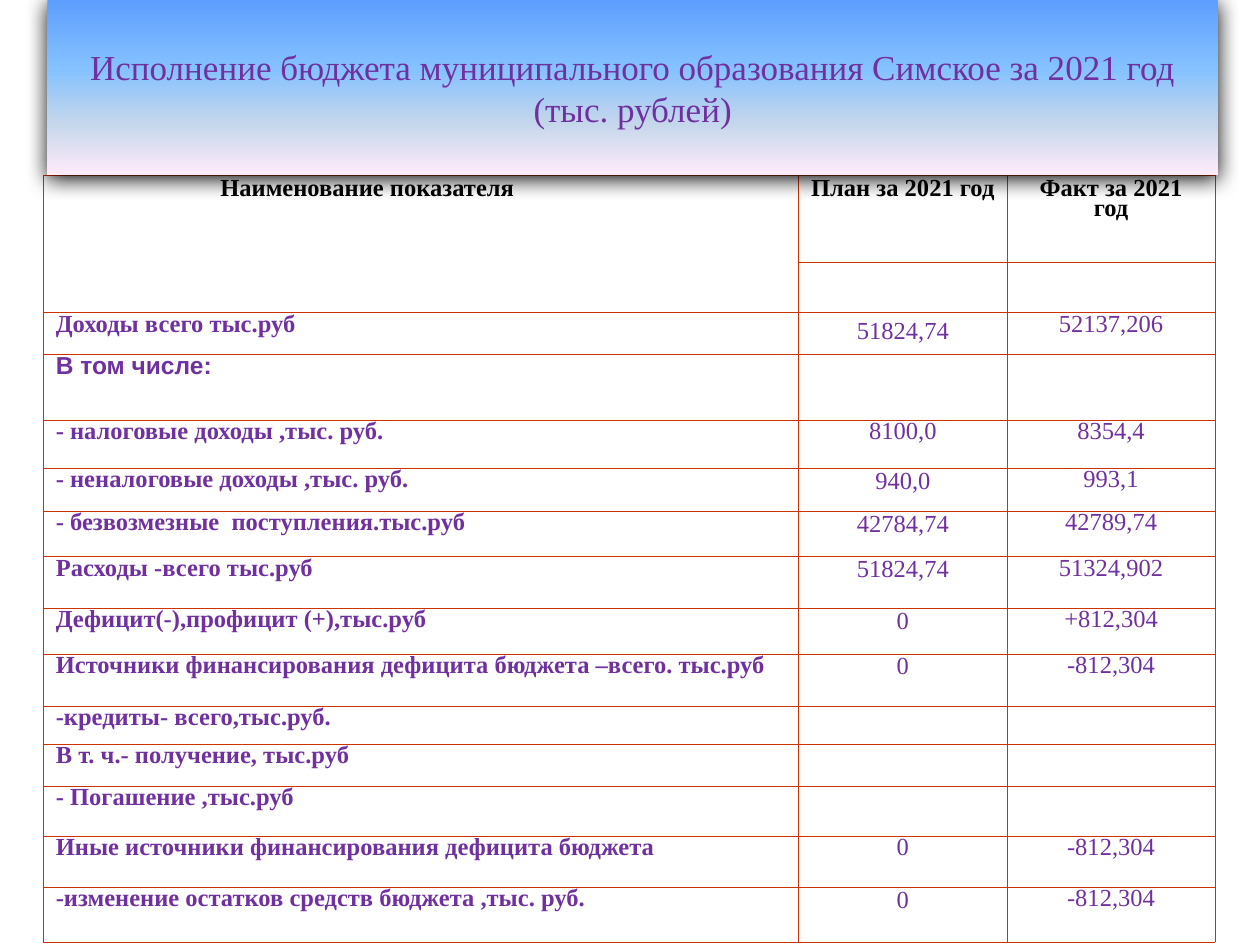
from copy import deepcopy

from lxml import etree
from pptx import Presentation
from pptx.dml.color import RGBColor
from pptx.enum.shapes import MSO_SHAPE
from pptx.enum.text import MSO_ANCHOR, PP_ALIGN
from pptx.oxml.ns import qn
from pptx.util import Pt

RECT = MSO_SHAPE.RECTANGLE
LEFT, MID = PP_ALIGN.LEFT, PP_ALIGN.CENTER
CENTER = MSO_ANCHOR.MIDDLE

TITLE = "Исполнение бюджета муниципального образования Симское за 2021 год (тыс. рублей)"
HEADS = ["Наименование показателя", "План за 2021 год", "Факт за 2021 год"]
ROWS = [
    ("Доходы всего тыс.руб", "51824,74", "52137,206"),
    ("В том числе:", "", ""),
    ("- налоговые доходы ,тыс. руб.", "8100,0", "8354,4"),
    ("- неналоговые доходы ,тыс. руб.", "940,0", "993,1"),
    ("- безвозмезные  поступления.тыс.руб", "42784,74", "42789,74"),
    ("Расходы -всего тыс.руб", "51824,74", "51324,902"),
    ("Дефицит(-),профицит (+),тыс.руб", "0", "+812,304"),
    ("Источники финансирования дефицита бюджета –всего. тыс.руб", "0", "-812,304"),
    ("-кредиты- всего,тыс.руб.", "", ""),
    ("В т. ч.- получение, тыс.руб", "", ""),
    ("- Погашение ,тыс.руб", "", ""),
    ("Иные источники финансирования дефицита бюджета", "0", "-812,304"),
    ("-изменение остатков средств бюджета ,тыс. руб.", "0", "-812,304"),
]
WIDTHS = [431.5, 119.5, 118.5]
HEIGHTS = [49.5, 24.5, 24.5, 37.5, 27.5, 24.5, 26, 29.5, 26, 30, 21.5, 24, 29, 29, 31.5]
STOPS = [(0, "5E9EFF"), (0.4, "85C2FF"), (0.7, "C4D6EB"), (1, "FFEBFA")]


def color(code):
    return RGBColor.from_string(code)


def node(parent, tag, **attrs):
    return etree.SubElement(parent, qn(tag), {k: str(v) for k, v in attrs.items()})


def write(frame, text, font="Times New Roman", size=14, ink="7030A0", bold=False,
          align=LEFT, space=1.0, before=0, indent=0):
    para = frame.paragraphs[0]
    para.alignment = align
    para.line_spacing = space
    para.space_before = Pt(before)
    if indent:
        para._p.get_or_add_pPr().set("marL", str(Pt(indent)))
    run = para.add_run()
    run.text = text
    run.font.name = font
    run.font.size = Pt(size)
    run.font.bold = bold
    run.font.color.rgb = color(ink)


class Deck:
    rule = "CC3300"
    paper = "FFFFFF"

    def __init__(self):
        self.show = Presentation()
        self.show.slide_width, self.show.slide_height = Pt(720), Pt(540)
        self.slide = self.show.slides.add_slide(self.show.slide_layouts[6])

    def banner(self, text, x, y, w, h):
        shape = self.slide.shapes.add_shape(RECT, Pt(x), Pt(y), Pt(w), Pt(h))
        shape.line.fill.background()
        fill = shape.fill
        fill.gradient()
        fill.gradient_angle = 270
        props = shape._element.spPr
        stops = props.find(".//" + qn("a:gsLst"))
        for _ in STOPS[2:]:
            stops.append(deepcopy(stops[0]))
        for stop, (place, code) in zip(fill.gradient_stops, STOPS):
            stop.position = place
            stop.color.rgb = color(code)
        shape.shadow.inherit = False
        shade = node(props.find(qn("a:effectLst")), "a:outerShdw", blurRad=Pt(12),
                     dist=Pt(2), dir=5400000, algn="ctr", rotWithShape=0)
        node(node(shade, "a:srgbClr", val="000000"), "a:alpha", val=93000)
        shape.text_frame.word_wrap = True
        shape.text_frame.vertical_anchor = CENTER
        write(shape.text_frame, text, size=20, align=MID)

    def grid(self, x, y, widths, heights):
        table = self.slide.shapes.add_table(
            len(heights), len(widths), Pt(x), Pt(y), Pt(sum(widths)), Pt(sum(heights))).table
        table.first_row = table.horz_banding = False
        for col, width in zip(table.columns, widths):
            col.width = Pt(width)
        for row, height in zip(table.rows, heights):
            row.height = Pt(height)
        for cell in table.iter_cells():
            self.frame(cell)
        return table

    def frame(self, cell):
        cell.margin_left = cell.margin_right = Pt(7.2)
        cell.margin_top, cell.margin_bottom = Pt(3), Pt(3.6)
        props = cell._tc.get_or_add_tcPr()
        for side in ("L", "R", "T", "B"):
            line = node(props, "a:ln" + side, w=Pt(0.06))
            node(node(line, "a:solidFill"), "a:srgbClr", val=self.rule)
        cell.fill.solid()
        cell.fill.fore_color.rgb = color(self.paper)

    def entry(self, cell, text, **form):
        if text:
            write(cell.text_frame, text, **form)
        else:
            node(cell.text_frame.paragraphs[0]._p, "a:endParaRPr", sz=1200)


def main():
    deck = Deck()
    table = deck.grid(24.7, 100, WIDTHS, HEIGHTS)
    table.cell(0, 0).merge(table.cell(1, 0))
    for col, head in enumerate(HEADS):
        place = {"align": MID, "before": 16} if col else {"indent": 94, "before": 12}
        deck.entry(table.cell(0, col), head, ink="000000", bold=True, space=0.74, **place)
    for num, (label, plan, fact) in enumerate(ROWS, 2):
        space = 0.74 if num == 2 else 0.66
        font = "Arial" if num == 3 else "Times New Roman"
        deck.entry(table.cell(num, 0), label, font=font, bold=True, space=space)
        form = {"space": 0.66 if num in (4, 13) else 0.74}
        if num == 2:
            form = {"space": 1.02, "before": 3.5}
        deck.entry(table.cell(num, 1), plan, align=MID, **form)
        deck.entry(table.cell(num, 2), fact, align=MID, space=space)
    deck.banner(TITLE, 27, 0, 669, 100)
    deck.show.save("out.pptx")


if __name__ == "__main__":
    main()
